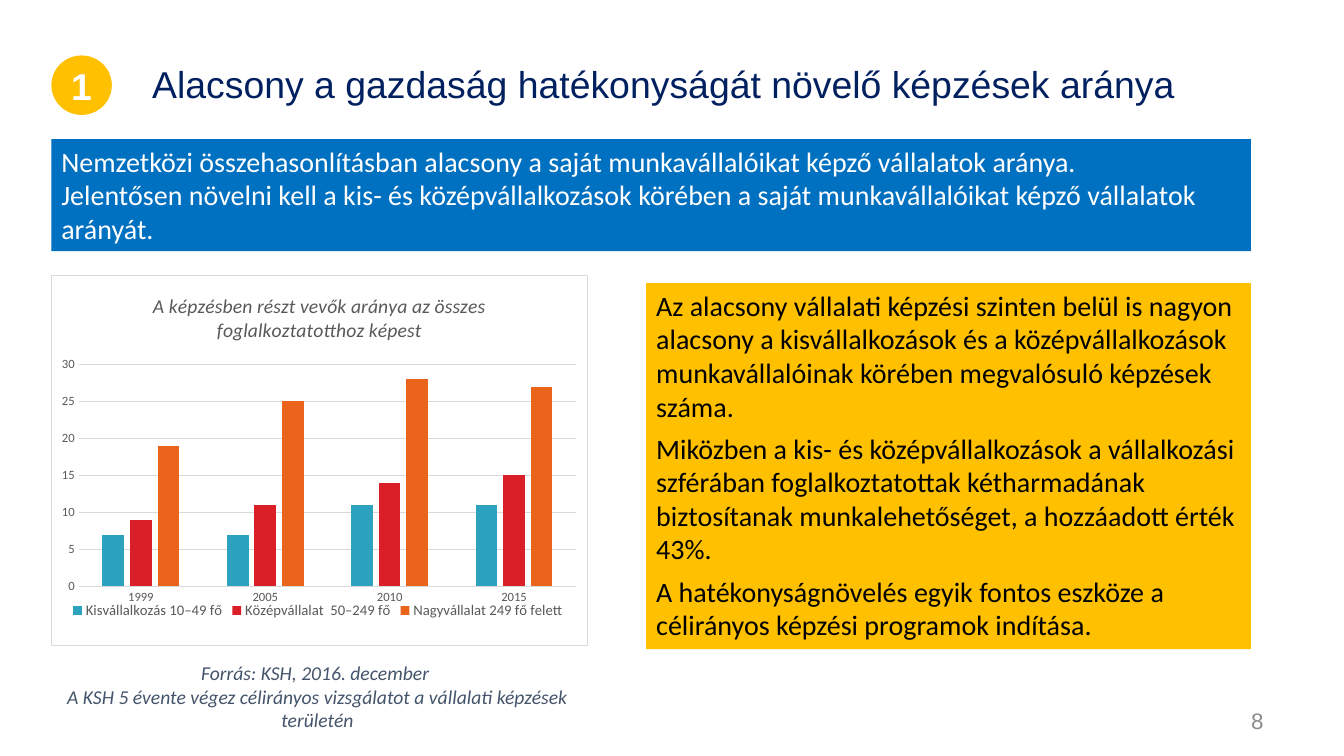
from dataclasses import dataclass
from typing import Any, Optional

from lxml.etree import SubElement
from pptx import Presentation
from pptx.chart.data import CategoryChartData
from pptx.dml.color import RGBColor
from pptx.enum.chart import XL_CHART_TYPE, XL_LEGEND_POSITION, XL_TICK_MARK
from pptx.enum.shapes import MSO_SHAPE
from pptx.enum.text import MSO_ANCHOR, MSO_AUTO_SIZE, PP_ALIGN
from pptx.oxml import parse_xml
from pptx.oxml.ns import nsdecls, qn
from pptx.util import Pt

WHITE, BLACK, NAVY, BLUE, AMBER = "FFFFFF", "000000", "002060", "0070C0", "FFC000"
SLATE, GREY, PALE, PAGE_GREY = "44546A", "595959", "D9D9D9", "8C8C8C"
LEFT = 36.7


@dataclass(frozen=True)
class Box:
    left: float
    top: float
    width: float
    height: float

    def lengths(self) -> tuple:
        return Pt(self.left), Pt(self.top), Pt(self.width), Pt(self.height)


@dataclass(frozen=True)
class TextStyle:
    size: float
    color: str
    font: str = "Calibri"
    bold: bool = False
    italic: bool = False
    align: PP_ALIGN = PP_ALIGN.LEFT
    anchor: MSO_ANCHOR = MSO_ANCHOR.TOP
    line_spacing: float = 1.0
    space_after: float = 0


@dataclass(frozen=True)
class CompanySize:
    label: str
    shares: tuple
    color: str


YEARS = ("1999", "2005", "2010", "2015")
COMPANY_SIZES = (
    CompanySize("Kisvállalkozás 10–49 fő", (7, 7, 11, 11), "2DA2BF"),
    CompanySize("Középvállalat  50–249 fő", (9, 11, 14, 15), "DA1F28"),
    CompanySize("Nagyvállalat 249 fő felett ", (19, 25, 28, 27), "EB641B"),
)
CHART_TITLE = "A képzésben részt vevők aránya az összes foglalkoztatotthoz képest"
HEADING = "Alacsony a gazdaság hatékonyságát növelő képzések aránya"
KEY_MESSAGE = (
    "Nemzetközi összehasonlításban alacsony a saját munkavállalóikat képző vállalatok aránya.\n"
    "Jelentősen növelni kell a kis- és középvállalkozások körében a saját munkavállalóikat "
    "képző vállalatok arányát."
)
FINDINGS = (
    "Az alacsony vállalati képzési szinten belül is nagyon alacsony a kisvállalkozások és a "
    "középvállalkozások munkavállalóinak körében megvalósuló képzések száma.",
    "Miközben a kis- és középvállalkozások a vállalkozási szférában foglalkoztatottak "
    "kétharmadának biztosítanak munkalehetőséget, a hozzáadott érték 43%.",
    "A hatékonyságnövelés egyik fontos eszköze a célirányos képzési programok indítása.",
)
SOURCE_NOTE = (
    "Forrás: KSH, 2016. december \n"
    "A KSH 5 évente végez célirányos vizsgálatot a vállalati képzések területén"
)


def apply(target: Any, values: dict) -> None:
    for attribute, value in values.items():
        setattr(target, attribute, value)


def paint(color_format: Any, hex_color: str) -> None:
    color_format.rgb = RGBColor.from_string(hex_color)


def fill_solid(fill: Any, hex_color: str) -> None:
    fill.solid()
    paint(fill.fore_color, hex_color)


def style_font(font: Any, size: float, hex_color: str, **extra: Any) -> None:
    apply(font, {"size": Pt(size), "name": "Calibri", **extra})
    paint(font.color, hex_color)


def write(shape: Any, paragraphs: tuple, style: TextStyle) -> None:
    frame = shape.text_frame
    apply(frame, {"word_wrap": True, "auto_size": MSO_AUTO_SIZE.NONE,
                  "vertical_anchor": style.anchor})
    for index, text in enumerate(paragraphs):
        paragraph = frame.paragraphs[0] if index == 0 else frame.add_paragraph()
        apply(paragraph, {"text": text, "alignment": style.align,
                          "line_spacing": style.line_spacing,
                          "space_before": Pt(0), "space_after": Pt(style.space_after)})
        for run in paragraph.runs:
            style_font(run.font, style.size, style.color, name=style.font,
                       bold=style.bold, italic=style.italic)


def place(shape: Any, box: Box) -> None:
    apply(shape, dict(zip(("left", "top", "width", "height"), box.lengths())))


def add_panel(slide: Any, kind: MSO_SHAPE, box: Box, color: str,
              text: str, style: TextStyle) -> None:
    panel = slide.shapes.add_shape(kind, *box.lengths())
    panel.shadow.inherit = False
    fill_solid(panel.fill, color)
    panel.line.fill.background()
    write(panel, (text,), style)


def add_note(slide: Any, box: Box, text: str, style: TextStyle) -> None:
    write(slide.shapes.add_textbox(*box.lengths()), (text,), style)


def remove_bullets(body: Any) -> None:
    for paragraph in body.text_frame.paragraphs:
        properties = paragraph._p.get_or_add_pPr()
        properties.set("marL", "0")
        properties.set("indent", "0")
        SubElement(properties, qn("a:buNone"))


def set_layout(parent: Any, area: Box, after: Optional[Any] = None, inner: bool = False) -> None:
    """Fix a chart part at fractions of the chart's size."""
    for old in parent.findall(qn("c:layout")):
        parent.remove(old)
    target = '<c:layoutTarget val="inner"/>' if inner else ""
    layout = parse_xml(
        f'<c:layout {nsdecls("c")}><c:manualLayout>{target}'
        '<c:xMode val="edge"/><c:yMode val="edge"/>'
        f'<c:x val="{area.left}"/><c:y val="{area.top}"/>'
        f'<c:w val="{area.width}"/><c:h val="{area.height}"/>'
        '</c:manualLayout></c:layout>')
    if after is None:
        parent.insert(0, layout)
    else:
        after.addnext(layout)


def frame_chart(chart: Any) -> None:
    """Give the chart area its white fill and thin border."""
    chart._chartSpace.find(qn("c:txPr")).addprevious(parse_xml(
        f'<c:spPr {nsdecls("c", "a")}><a:solidFill><a:srgbClr val="{WHITE}"/></a:solidFill>'
        f'<a:ln w="{Pt(0.75)}"><a:solidFill><a:srgbClr val="{PALE}"/></a:solidFill></a:ln></c:spPr>'))


def add_training_chart(slide: Any, box: Box) -> None:
    data = CategoryChartData()
    data.categories = YEARS
    for company in COMPANY_SIZES:
        data.add_series(company.label, company.shares)
    chart = slide.shapes.add_chart(XL_CHART_TYPE.COLUMN_CLUSTERED, *box.lengths(), data).chart
    style_font(chart.font, 10, BLACK)
    frame_chart(chart)

    title = chart.chart_title.text_frame
    title.text = CHART_TITLE
    style_font(title.paragraphs[0].runs[0].font, 14, GREY, bold=False, italic=True)

    plot = chart.plots[0]
    apply(plot, {"gap_width": 219, "overlap": -27, "vary_by_categories": False})
    for series, company in zip(plot.series, COMPANY_SIZES):
        fill_solid(series.format.fill, company.color)

    shares, years = chart.value_axis, chart.category_axis
    apply(shares, {"minimum_scale": 0, "maximum_scale": 30, "major_unit": 5})
    for axis in (shares, years):
        apply(axis, {"major_tick_mark": XL_TICK_MARK.NONE, "minor_tick_mark": XL_TICK_MARK.NONE})
        style_font(axis.tick_labels.font, 9, GREY)
    shares.format.line.fill.background()
    for line in (years.format.line, shares.major_gridlines.format.line):
        line.width = Pt(0.75)
        paint(line.color, PALE)

    chart.has_legend = True
    legend = chart.legend
    apply(legend, {"position": XL_LEGEND_POSITION.BOTTOM, "include_in_layout": False})
    style_font(legend.font, 10.5, GREY)
    set_layout(plot._element.getparent(), Box(0.05, 0.24, 0.93, 0.6), inner=True)
    set_layout(legend._element, Box(0.03, 0.87, 0.94, 0.07),
               after=legend._element.find(qn("c:legendPos")))


def main() -> None:
    deck = Presentation()
    apply(deck, {"slide_width": Pt(960), "slide_height": Pt(540)})
    slide = deck.slides.add_slide(deck.slide_layouts[1])
    heading, findings = slide.placeholders

    place(heading, Box(101.5, 44, 820, 38))
    write(heading, (HEADING,), TextStyle(26.7, NAVY, "Arial", line_spacing=0.9))

    place(findings, Box(461.5, 202.3, 432, 261.4))
    fill_solid(findings.fill, AMBER)
    write(findings, FINDINGS, TextStyle(20, BLACK, space_after=6))
    remove_bullets(findings)

    add_panel(slide, MSO_SHAPE.OVAL, Box(LEFT, 39.6, 43.2, 42.5), AMBER, "1",
              TextStyle(26.7, WHITE, "Arial", bold=True, align=PP_ALIGN.CENTER,
                        anchor=MSO_ANCHOR.MIDDLE))
    add_panel(slide, MSO_SHAPE.RECTANGLE, Box(LEFT, 99.4, 856.8, 80), BLUE, KEY_MESSAGE,
              TextStyle(20, WHITE))
    add_training_chart(slide, Box(LEFT, 196.6, 383, 265))
    add_note(slide, Box(35.3, 468.7, 383, 60.5), SOURCE_NOTE,
             TextStyle(14, SLATE, italic=True, align=PP_ALIGN.CENTER))
    add_note(slide, Box(687.6, 500.4, 222, 28.8), "8",
             TextStyle(16, PAGE_GREY, "Arial", align=PP_ALIGN.RIGHT, anchor=MSO_ANCHOR.MIDDLE))
    deck.save("out.pptx")


if __name__ == "__main__":
    main()
